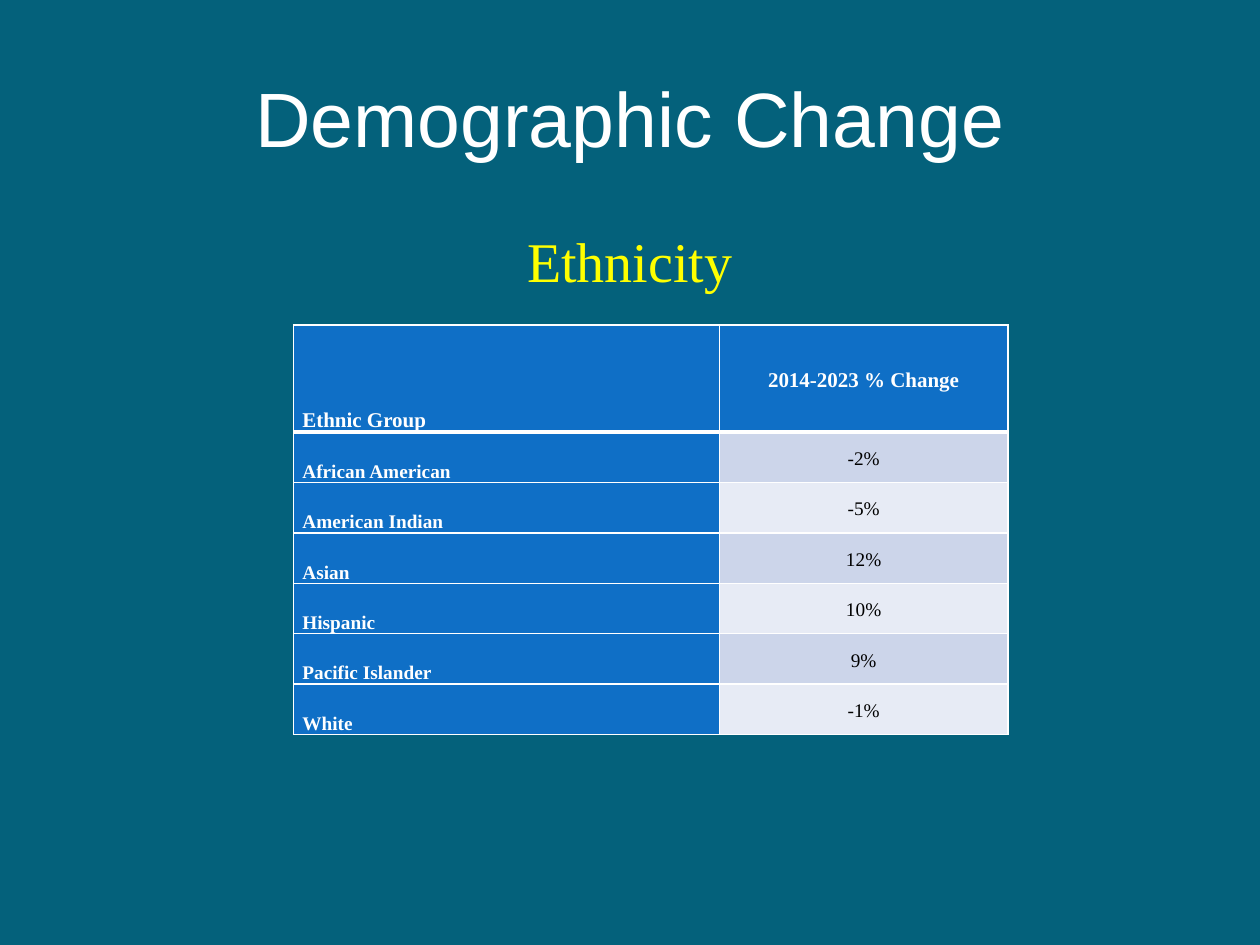
import dataclasses

import pptx
import pptx.dml.color
import pptx.enum.text
import pptx.oxml
import pptx.oxml.ns
import pptx.util

Inches = pptx.util.Inches
Pt = pptx.util.Pt
Align = pptx.enum.text.PP_ALIGN
Anchor = pptx.enum.text.MSO_ANCHOR


@dataclasses.dataclass(frozen=True)
class Theme:
    background: str = "04617B"
    light: str = "FFFFFF"
    dark: str = "000000"
    accent: str = "FFFF00"
    header: str = "0F6FC6"
    bands: tuple = ("CCD5EA", "E7EBF5")
    title_font: str = "Arial"
    body_font: str = "Times New Roman"
    title_size: int = 44
    subtitle_size: int = 32
    header_size: int = 12
    cell_size: int = 11
    border: int = 1
    header_border: int = 3


THEME = Theme()
HEADINGS = ("Ethnic Group", "2014-2023 % Change")
CHANGES = (
    ("African American", "-2%"),
    ("American Indian", "-5%"),
    ("Asian", "12%"),
    ("Hispanic", "10%"),
    ("Pacific Islander", "9%"),
    ("White", "-1%"),
)


def rgb(color):
    return pptx.dml.color.RGBColor.from_string(color)


def format_paragraph(paragraph, font_name, size, color, alignment, bold=False):
    paragraph.alignment = alignment
    for run in paragraph.runs:
        run.font.name = font_name
        run.font.size = Pt(size)
        run.font.bold = bold
        run.font.color.rgb = rgb(color)


def place(shape, box):
    shape.left, shape.top, shape.width, shape.height = map(Inches, box)


def add_title(slide, box):
    title = slide.shapes.title
    place(title, box)
    title.text_frame.text = "Demographic Change"
    title.text_frame.vertical_anchor = Anchor.MIDDLE
    format_paragraph(title.text_frame.paragraphs[0], THEME.title_font,
                     THEME.title_size, THEME.light, Align.CENTER)


def add_subtitle(slide, box):
    body = slide.placeholders[1]
    place(body, box)
    body.text_frame.text = "Ethnicity"
    paragraph = body.text_frame.paragraphs[0]
    format_paragraph(paragraph, THEME.body_font, THEME.subtitle_size,
                     THEME.accent, Align.CENTER)
    paragraph.space_before = Pt(0.2 * THEME.subtitle_size)
    # No bullet and no hanging indent
    properties = paragraph._p.get_or_add_pPr()
    properties.set("marL", "0")
    properties.set("indent", "0")
    properties.append(pptx.oxml.parse_xml(
        f"<a:buNone {pptx.oxml.ns.nsdecls('a')}/>"))


def set_borders(cell, widths):
    properties = cell._tc.get_or_add_tcPr()
    for position, (side, width) in enumerate(widths.items()):
        line = pptx.oxml.parse_xml(
            f'<a:ln{side} {pptx.oxml.ns.nsdecls("a")} w="{Pt(width)}">'
            f'<a:solidFill><a:srgbClr val="{THEME.light}"/></a:solidFill>'
            f'</a:ln{side}>')
        properties.insert(position, line)


def format_cell(cell, text, row, column):
    is_header, is_label = row == 0, column == 0
    is_strong = is_header or is_label
    cell.text_frame.text = text
    cell.vertical_anchor = Anchor.BOTTOM if is_label else Anchor.MIDDLE
    cell.margin_left = cell.margin_right = Inches(0.07)
    cell.margin_top = cell.margin_bottom = 0
    cell.fill.solid()
    cell.fill.fore_color.rgb = rgb(
        THEME.header if is_strong else THEME.bands[(row - 1) % 2])
    paragraph = cell.text_frame.paragraphs[0]
    paragraph.line_spacing = 1.15
    format_paragraph(
        paragraph, THEME.body_font,
        THEME.header_size if is_header else THEME.cell_size,
        THEME.light if is_strong else THEME.dark,
        Align.LEFT if is_label else Align.CENTER, is_strong)
    # The rule under the header is shared with the first data row
    set_borders(cell, {
        "L": THEME.border,
        "R": THEME.border,
        "T": THEME.header_border if row == 1 else THEME.border,
        "B": THEME.header_border if is_header else THEME.border,
    })


def add_change_table(slide, box):
    rows = (HEADINGS, *CHANGES)
    left, top, width, height = box
    label_width, row_height = 3.38, 0.4
    table = slide.shapes.add_table(
        len(rows), len(HEADINGS), *map(Inches, box)).table
    table.columns[0].width = Inches(label_width)
    table.columns[1].width = Inches(width - label_width)
    for row, texts in enumerate(rows):
        table.rows[row].height = Inches(
            row_height if row else height - row_height * len(CHANGES))
        for column, text in enumerate(texts):
            format_cell(table.cell(row, column), text, row, column)


def main():
    presentation = pptx.Presentation()
    presentation.slide_width = Inches(10)
    presentation.slide_height = Inches(7.5)
    slide = presentation.slides.add_slide(presentation.slide_layouts[1])
    slide.background.fill.solid()
    slide.background.fill.fore_color.rgb = rgb(THEME.background)
    add_title(slide, (0.5, 0.3, 9, 1.25))
    add_subtitle(slide, (0.5, 1.75, 9, 4.95))
    add_change_table(slide, (2.33, 2.58, 5.67, 3.25))
    presentation.save("out.pptx")


if __name__ == "__main__":
    main()
